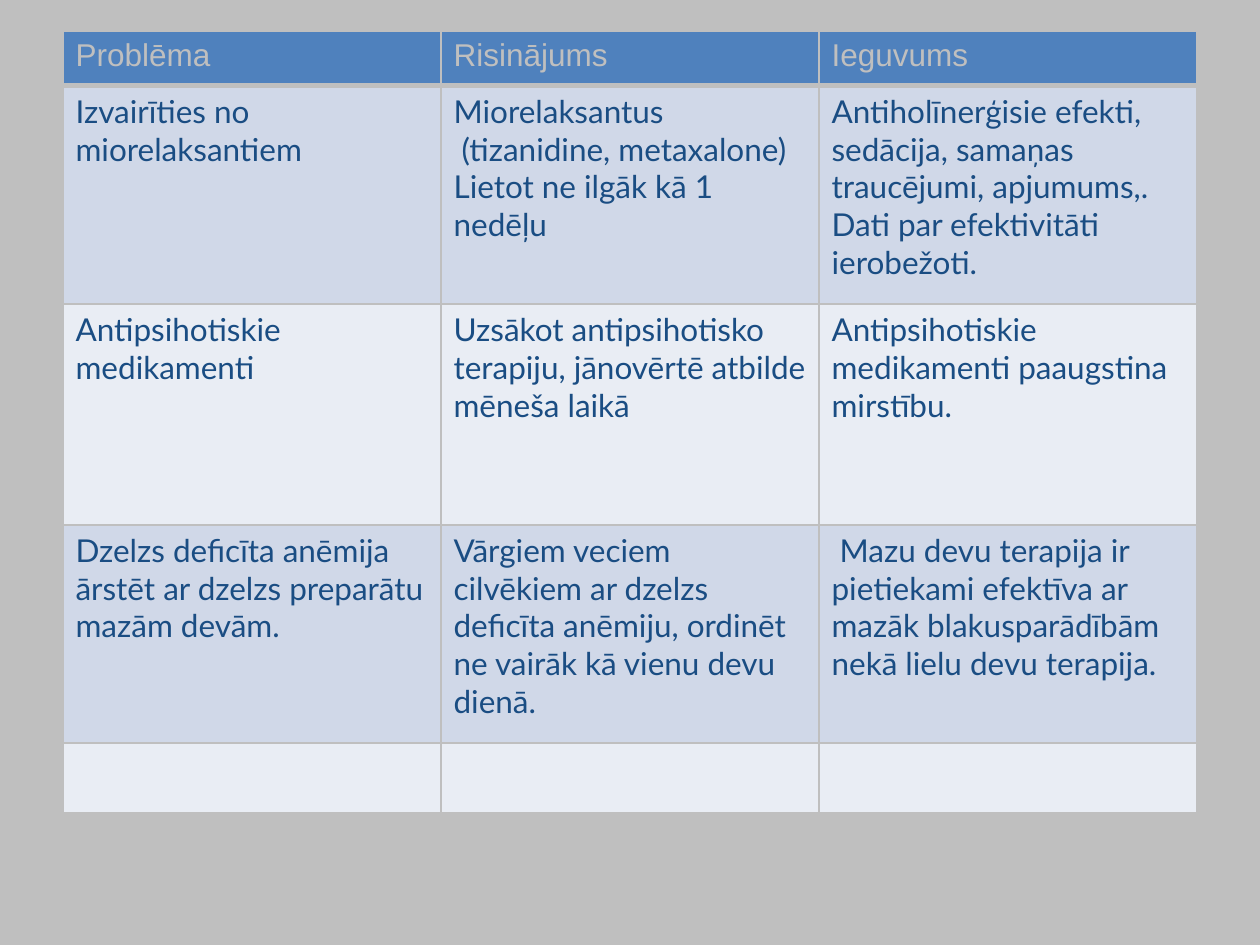
"""Build a slide with a table of medication problems, solutions and benefits."""
from lxml.etree import SubElement
from pptx import Presentation
from pptx.dml.color import RGBColor
from pptx.oxml.ns import qn
from pptx.util import Cm, Pt

GREY, BLUE, NAVY = "BFBFBF", "4F81BD", "1A4D83"
BANDS = ("D0D8E8", "E9EDF4")
COLUMN_WIDTH = 7.62
ROW_HEIGHTS = (1.09, 4.4, 4.45, 4.4, 1.41)
ROWS = [
    (["Problēma"], ["Risinājums"], ["Ieguvums"]),
    (["Izvairīties no miorelaksantiem"],
     ["Miorelaksantus", " (tizanidine, metaxalone) Lietot ne ilgāk kā 1 nedēļu"],
     ["Antiholīnerģisie efekti, sedācija, samaņas traucējumi, apjumums,. "
      "Dati par efektivitāti ierobežoti."]),
    (["Antipsihotiskie medikamenti"],
     ["Uzsākot antipsihotisko terapiju, jānovērtē atbilde mēneša laikā"],
     ["Antipsihotiskie medikamenti paaugstina mirstību."]),
    (["Dzelzs deficīta anēmija ārstēt ar dzelzs preparātu mazām devām."],
     ["Vārgiem veciem cilvēkiem ar dzelzs deficīta anēmiju, "
      "ordinēt ne vairāk kā vienu devu dienā."],
     [" Mazu devu terapija ir pietiekami efektīva ar mazāk "
      "blakusparādībām nekā lielu devu terapija."]),
    ([], [], []),
]


def color(value):
    return RGBColor.from_string(value)


def paint(fill, value):
    fill.solid()
    fill.fore_color.rgb = color(value)


def add_borders(cell, bottom_width):
    properties = cell._tc.get_or_add_tcPr()
    for side, width in (("L", 1), ("R", 1), ("T", 1), ("B", bottom_width)):
        line = SubElement(properties, qn(f"a:ln{side}"), w=str(Pt(width)))
        fill = SubElement(line, qn("a:solidFill"))
        SubElement(fill, qn("a:srgbClr"), val=GREY)


def write(cell, paragraphs, font_name, font_color):
    frame = cell.text_frame
    for index, text in enumerate(paragraphs):
        paragraph = frame.add_paragraph() if index else frame.paragraphs[0]
        run = paragraph.add_run()
        run.text = text
        run.font.name = font_name
        run.font.size = Pt(18)
        run.font.bold = False
        run.font.color.rgb = color(font_color)


def main():
    presentation = Presentation()
    presentation.slide_width, presentation.slide_height = Cm(25.4), Cm(19.05)
    slide = presentation.slides.add_slide(presentation.slide_layouts[6])
    paint(slide.background.fill, GREY)

    column_count = len(ROWS[0])
    table = slide.shapes.add_table(
        len(ROWS), column_count, Cm(1.27), Cm(0.64),
        Cm(COLUMN_WIDTH * column_count), Cm(sum(ROW_HEIGHTS))).table
    for column in table.columns:
        column.width = Cm(COLUMN_WIDTH)
    for row_index, (contents, height) in enumerate(zip(ROWS, ROW_HEIGHTS)):
        table.rows[row_index].height = Cm(height)
        is_header = row_index == 0
        for column_index, paragraphs in enumerate(contents):
            cell = table.cell(row_index, column_index)
            add_borders(cell, 3 if is_header else 1)
            paint(cell.fill, BLUE if is_header else BANDS[(row_index - 1) % 2])
            write(cell, paragraphs, "Arial" if is_header else "Lato",
                  GREY if is_header else NAVY)
    presentation.save("out.pptx")


if __name__ == "__main__":
    main()
